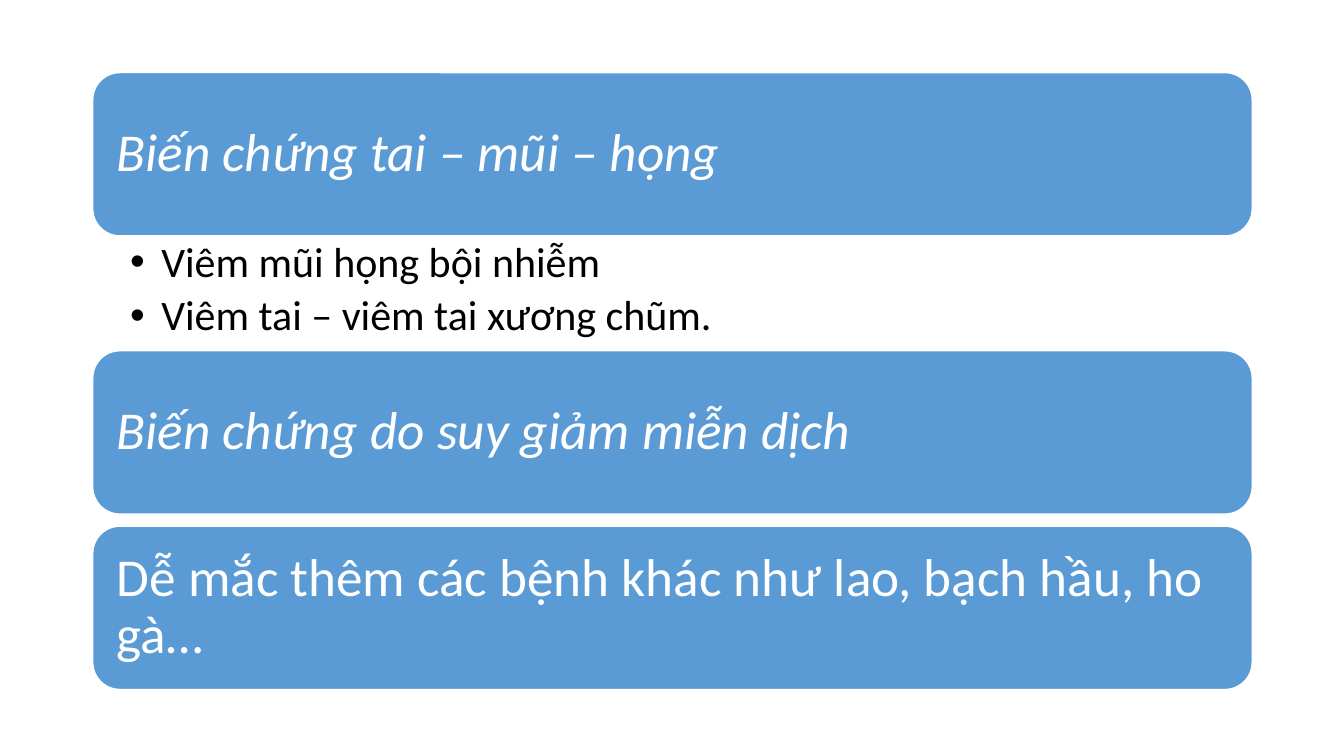
from lxml import etree
from pptx import Presentation
from pptx.dml.color import RGBColor
from pptx.enum.shapes import MSO_SHAPE
from pptx.enum.text import MSO_ANCHOR, PP_ALIGN
from pptx.oxml.ns import qn
from pptx.util import Emu, Pt

ROUNDED = MSO_SHAPE.ROUNDED_RECTANGLE
MIDDLE, TOP = MSO_ANCHOR.MIDDLE, MSO_ANCHOR.TOP
LEFT = PP_ALIGN.LEFT

BLUE = RGBColor(0x5B, 0x9B, 0xD5)
WHITE = RGBColor(0xFF, 0xFF, 0xFF)
BLACK = RGBColor(0x00, 0x00, 0x00)

PX = 9144  # EMU, 100 px to the inch
BAR_X, BAR_W, BAR_H = 92, 1150, 162
LIST_H = 114
GAP = 12

SECTIONS = [
    ("Biến chứng tai – mũi – họng", True,
     ["Viêm mũi họng bội nhiễm", "Viêm tai – viêm tai xương chũm."]),
    ("Biến chứng do suy giảm miễn dịch", True, []),
    ("Dễ mắc thêm các bệnh khác như lao, bạch hầu, ho gà…", False, []),
]


def px(n):
    return Emu(n * PX)


class Deck:
    font = "Calibri"
    bar_size, list_size = 38, 30

    def __init__(self, width, height):
        self.prs = Presentation()
        self.prs.slide_width, self.prs.slide_height = px(width), px(height)
        self.s = self.prs.slides.add_slide(self.prs.slide_layouts[6])

    def frame(self, sp, anchor, left, top, right, bottom):
        """Set wrapping, anchor and insets, and return the text frame."""
        tf = sp.text_frame
        tf.word_wrap = True
        tf.vertical_anchor = anchor
        tf.margin_left, tf.margin_top = px(left), px(top)
        tf.margin_right, tf.margin_bottom = px(right), px(bottom)
        return tf

    def add_text(self, p, text, size, color, italic=False):
        p.alignment = LEFT
        p.line_spacing = 0.9
        r = p.add_run()
        r.text = text
        r.font.name, r.font.size = self.font, Pt(size)
        r.font.italic = italic
        r.font.color.rgb = color

    def bar(self, y, text, italic):
        sp = self.s.shapes.add_shape(ROUNDED, px(BAR_X), px(y), px(BAR_W), px(BAR_H))
        sp.shadow.inherit = False
        sp.fill.solid()
        sp.fill.fore_color.rgb = BLUE
        sp.line.color.rgb = WHITE
        sp.line.width = Pt(1)
        tf = self.frame(sp, MIDDLE, 16, 16, 16, 16)
        self.add_text(tf.paragraphs[0], text, self.bar_size, WHITE, italic)

    def bullets(self, y, items):
        sp = self.s.shapes.add_textbox(px(BAR_X), px(y), px(BAR_W), px(LIST_H))
        tf = self.frame(sp, TOP, 37, 5, 30, 5)
        for i, item in enumerate(items):
            p = tf.add_paragraph() if i else tf.paragraphs[0]
            self.add_text(p, item, self.list_size, BLACK)
            p.level = 1
            p.space_after = Pt(6)
            pPr = p._p.get_or_add_pPr()
            pPr.set("marL", str(px(31)))
            pPr.set("indent", str(px(-31)))
            etree.SubElement(pPr, qn("a:buFont")).set("typeface", "Arial")
            etree.SubElement(pPr, qn("a:buChar")).set("char", "•")


def main():
    deck = Deck(1333, 750)
    y = 72
    for title, italic, items in SECTIONS:
        deck.bar(y, title, italic)
        y += BAR_H
        if items:
            deck.bullets(y, items)
            y += LIST_H
        else:
            y += GAP
    deck.prs.save("out.pptx")


if __name__ == "__main__":
    main()
